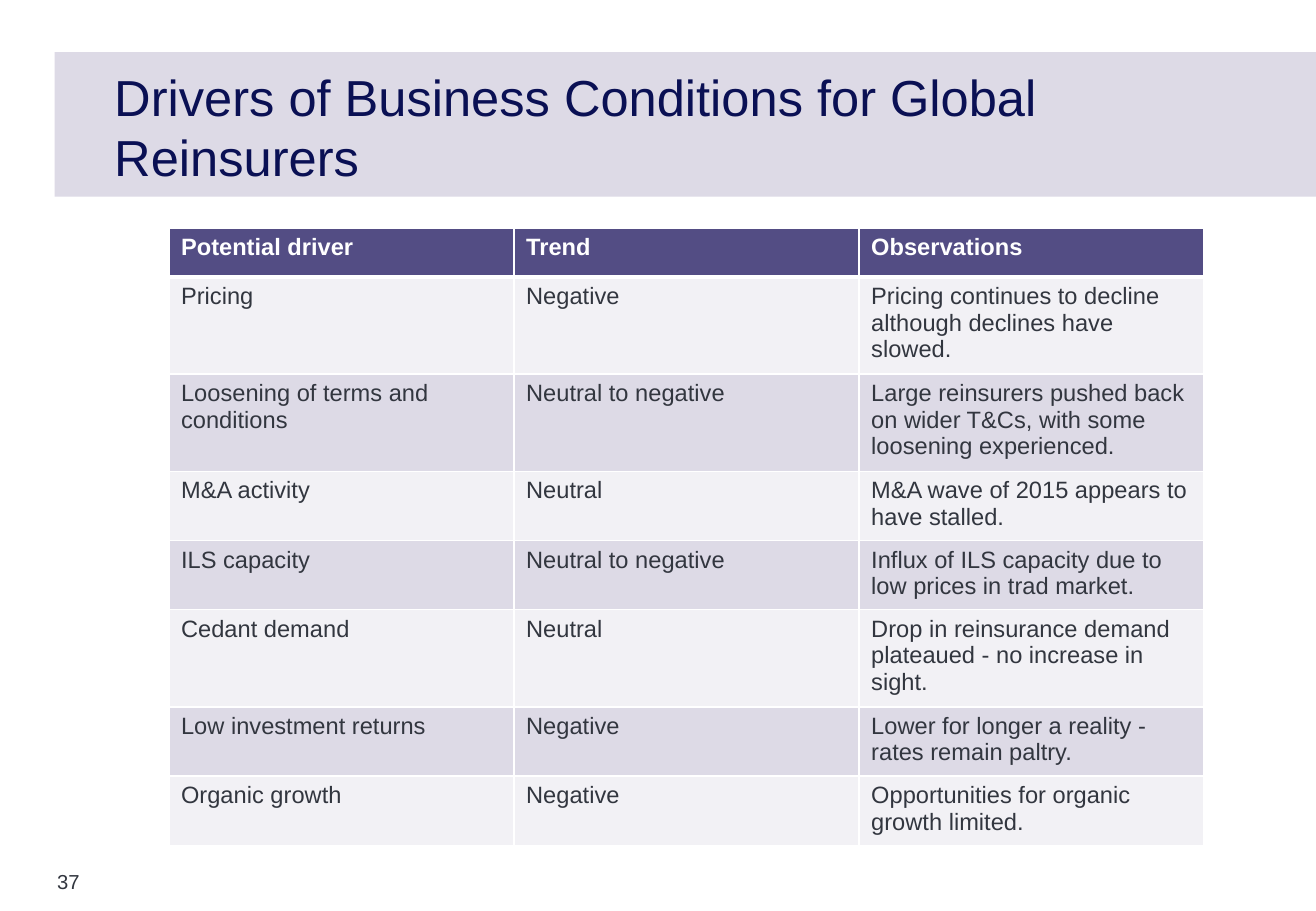
from lxml.etree import SubElement
from pptx import Presentation
from pptx.dml.color import RGBColor
from pptx.enum.shapes import MSO_SHAPE as Shape
from pptx.enum.text import MSO_ANCHOR as Anchor, MSO_AUTO_SIZE as AutoSize, PP_ALIGN as Align
from pptx.oxml.ns import qn
from pptx.util import Pt

PX = 9144  # 100 px to the inch
COLORS = {
    "title": "0A1054",
    "text": "32363F",
    "header": "534D84",
    "light": "F2F1F5",
    "lilac": "DDDAE6",
    "white": "FFFFFF",
}
HEADINGS = ("Potential driver", "Trend", "Observations")
DRIVERS = [
    ("Pricing", "Negative", "Pricing continues to decline although declines have slowed."),
    ("Loosening of terms and conditions", "Neutral to negative",
     "Large reinsurers pushed back on wider T&Cs, with some loosening experienced."),
    ("M&A activity", "Neutral", "M&A wave of 2015 appears to have stalled."),
    ("ILS capacity", "Neutral to negative",
     "Influx of ILS capacity due to low prices in trad market."),
    ("Cedant demand", "Neutral",
     "Drop in reinsurance demand plateaued - no increase in sight."),
    ("Low investment returns", "Negative",
     "Lower for longer a reality - rates remain paltry."),
    ("Organic growth", "Negative", "Opportunities for organic growth limited."),
]
ROW_HEIGHTS = (40, 80, 80, 57, 57, 80, 57, 57)
COLUMN_WIDTH = 284


def write(frame, text, size, color, bold=False):
    frame.word_wrap = True
    para = frame.paragraphs[0]
    para.text = text
    para.alignment = Align.LEFT
    para.font.name = "Arial"
    para.font.size = Pt(size)
    para.font.bold = bold
    para.font.color.rgb = RGBColor.from_string(COLORS[color])


def add_border(cell, side, points):
    line = SubElement(cell._tc.get_or_add_tcPr(), qn(f"a:ln{side}"), w=str(Pt(points)))
    fill = SubElement(line, qn("a:solidFill"))
    SubElement(fill, qn("a:srgbClr"), val=COLORS["white"])


deck = Presentation()
deck.slide_width, deck.slide_height = 1083 * PX, 750 * PX
page = deck.slides.add_slide(deck.slide_layouts[5])

# Title on its band
title = page.shapes.title
title.left, title.top, title.width, title.height = 94 * PX, 60 * PX, 898 * PX, 94 * PX
write(title.text_frame, "Drivers of Business Conditions for Global Reinsurers", 30, "title")
title.text_frame.vertical_anchor = Anchor.BOTTOM

band = page.shapes.add_shape(Shape.RECTANGLE, 45 * PX, 43 * PX, 1038 * PX, 119 * PX)
band.shadow.inherit = False
band.fill.solid()
band.fill.fore_color.rgb = RGBColor.from_string(COLORS["lilac"])
band.line.fill.background()
title.element.addprevious(band.element)

# Page number
number = page.shapes.add_textbox(47 * PX, 716 * PX, 39 * PX, 26 * PX)
write(number.text_frame, "37", 12, "text")

for box in (title, number):
    frame = box.text_frame
    frame.auto_size = AutoSize.NONE
    frame.margin_left = frame.margin_top = frame.margin_right = frame.margin_bottom = 0

# Table of drivers
rows = [HEADINGS, *DRIVERS]
table = page.shapes.add_table(
    len(rows), len(HEADINGS), 139 * PX, 188 * PX,
    len(HEADINGS) * COLUMN_WIDTH * PX, sum(ROW_HEIGHTS) * PX).table
for column in table.columns:
    column.width = COLUMN_WIDTH * PX
for row_index, (texts, height) in enumerate(zip(rows, ROW_HEIGHTS)):
    table.rows[row_index].height = height * PX
    is_header = row_index == 0
    fill_name = "header" if is_header else ("lilac", "light")[row_index % 2]
    for column_index, text in enumerate(texts):
        cell = table.cell(row_index, column_index)
        write(cell.text_frame, text, 14, "white" if is_header else "text", is_header)
        for side in "LRTB":
            under_header = (row_index, side) in ((0, "B"), (1, "T"))
            add_border(cell, side, 3 if under_header else 1)
        cell.fill.solid()
        cell.fill.fore_color.rgb = RGBColor.from_string(COLORS[fill_name])

deck.save("out.pptx")
